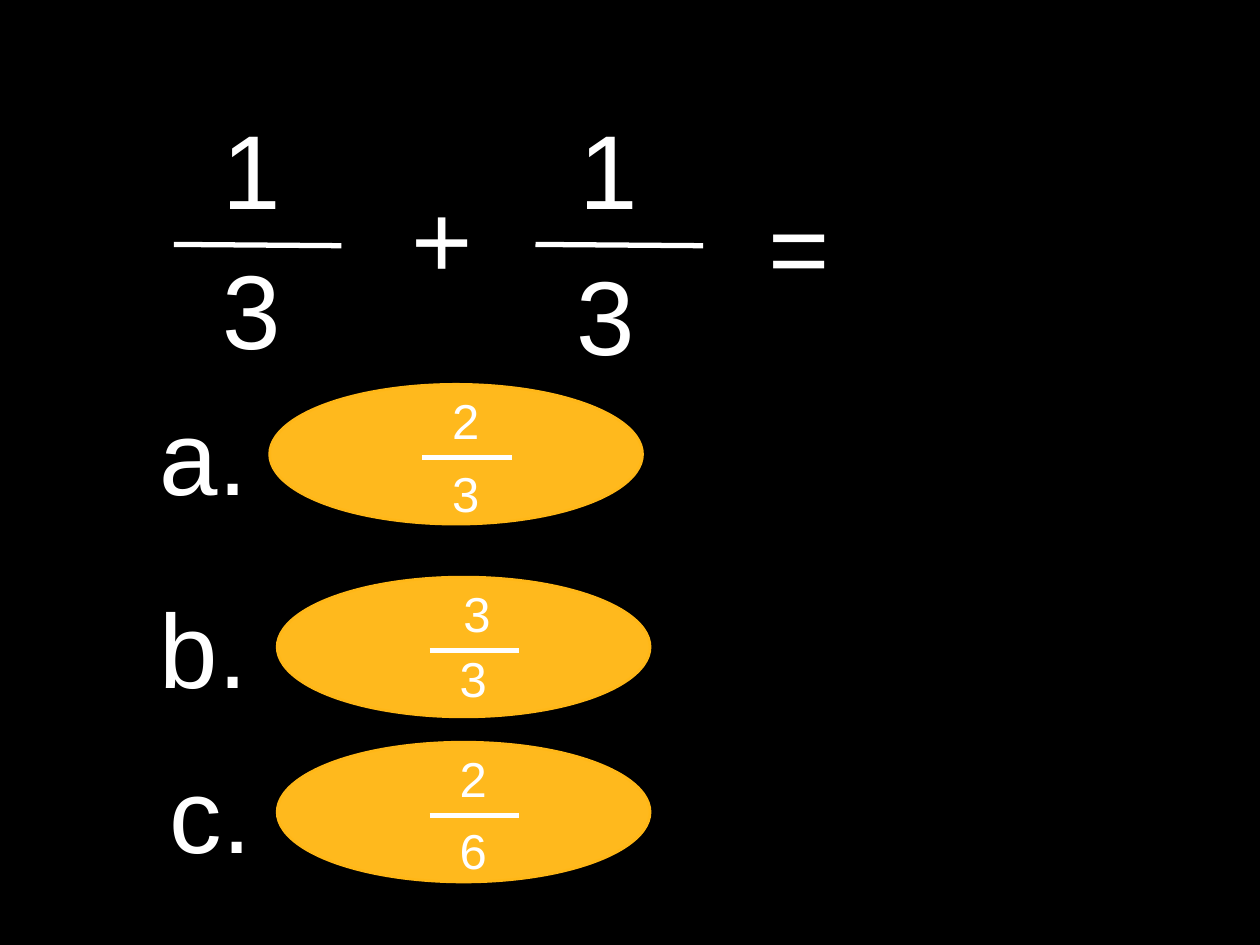
from dataclasses import dataclass

from lxml.etree import SubElement
from pptx import Presentation
from pptx.dml.color import RGBColor
from pptx.enum.shapes import MSO_CONNECTOR as Connector, MSO_SHAPE as Shape
from pptx.enum.text import MSO_AUTO_SIZE as AutoSize
from pptx.oxml.ns import qn
from pptx.util import Inches, Pt


@dataclass(frozen=True)
class Theme:
    background: RGBColor = RGBColor(0x00, 0x00, 0x00)
    ink: RGBColor = RGBColor(0xFF, 0xFF, 0xFF)
    oval: RGBColor = RGBColor(0xFF, 0xB9, 0x1D)
    oval_edge: RGBColor = RGBColor(0xFF, 0xB7, 0x17)
    font: str = "Arial"
    large: int = 60
    small: int = 28
    bar: float = 3
    edge: float = 1.5


THEME = Theme()
SLIDE_SIZE = 10, 7.5
LARGE_HEIGHT, SMALL_HEIGHT = 1.11, 0.57

# Numerator, its left; denominator, its left and top; left of the bar
TERMS = [
    ("1", 1.67, "3", 1.67, 1.89, 1.38),
    ("1", 4.5, "3", 4.48, 1.94, 4.25),
]
NUMERATOR_TOP, TERM_BAR_TOP, TERM_BAR_WIDTH = 0.78, 1.94, 1.33

# Sign, left, top
SIGNS = [("+", 3.17, 1.33), ("=", 6, 1.39)]

# Letter, its left, row top, oval left, numerator, its nudge, denominator, its drop
ANSWERS = [
    ("a.", 1.17, 3.05, 2.14, "2", 0, "3", 0.58),
    ("b.", 1.17, 4.58, 2.2, "3", 0.03, "3", 0.52),
    ("c.", 1.25, 5.89, 2.2, "2", 0, "6", 0.57),
]
OVAL_WIDTH = 2.96
DIGIT_INSET, BAR_INSET = 1.35, 1.21
ANSWER_BAR_DROP, ANSWER_BAR_WIDTH = 0.58, 0.71


def add_text(shapes, text, left, top, width, height, size, wrap=True):
    box = shapes.add_textbox(*map(Inches, (left, top, width, height)))
    frame = box.text_frame
    frame.word_wrap = wrap
    frame.auto_size = AutoSize.SHAPE_TO_FIT_TEXT
    span = frame.paragraphs[0].add_run()
    span.text = text
    span.font.name = THEME.font
    span.font.size = Pt(size)
    span.font.color.rgb = THEME.ink


def add_symbol(shapes, text, left, top, width):
    add_text(shapes, text, left, top, width, LARGE_HEIGHT, THEME.large, wrap=False)


def add_bar(shapes, left, top, width, slant=0):
    ends = left, top, left + width, top + slant
    bar = shapes.add_connector(Connector.STRAIGHT, *map(Inches, ends))
    bar.line.color.rgb = THEME.ink
    bar.line.width = Pt(THEME.bar)
    SubElement(bar._element.spPr, qn("a:effectLst"))


def add_oval(shapes, left, top):
    place = left, top, OVAL_WIDTH, LARGE_HEIGHT
    oval = shapes.add_shape(Shape.OVAL, *map(Inches, place))
    oval.shadow.inherit = False
    oval.fill.solid()
    oval.fill.fore_color.rgb = THEME.oval
    oval.line.color.rgb = THEME.oval_edge
    oval.line.width = Pt(THEME.edge)


def add_term(page, upper, upper_left, lower, lower_left, lower_top, bar_left):
    shapes = page.shapes.add_group_shape().shapes
    add_text(shapes, lower, lower_left, lower_top, 1.33, LARGE_HEIGHT, THEME.large)
    add_bar(shapes, bar_left, TERM_BAR_TOP, TERM_BAR_WIDTH, slant=0.01)
    add_text(shapes, upper, upper_left, NUMERATOR_TOP, 0.75, LARGE_HEIGHT, THEME.large)


def add_answer(page, letter, letter_left, top, left, upper, nudge, lower, drop):
    add_symbol(page.shapes, letter, letter_left, top, 0.9)
    shapes = page.shapes.add_group_shape().shapes
    digit_left = left + DIGIT_INSET
    add_oval(shapes, left, top)
    add_text(shapes, lower, digit_left, top + drop, 0.52, SMALL_HEIGHT, THEME.small)
    add_text(shapes, upper, digit_left + nudge, top, 0.42, SMALL_HEIGHT,
             THEME.small, wrap=False)
    add_bar(shapes, left + BAR_INSET, top + ANSWER_BAR_DROP, ANSWER_BAR_WIDTH)


def main():
    deck = Presentation()
    deck.slide_width, deck.slide_height = map(Inches, SLIDE_SIZE)
    page = deck.slides.add_slide(deck.slide_layouts.get_by_name("Blank"))
    page.background.fill.solid()
    page.background.fill.fore_color.rgb = THEME.background

    for term in TERMS:
        add_term(page, *term)
    for sign, left, top in SIGNS:
        add_symbol(page.shapes, sign, left, top, 0.69)
    for answer in ANSWERS:
        add_answer(page, *answer)
    deck.save("out.pptx")


if __name__ == "__main__":
    main()
